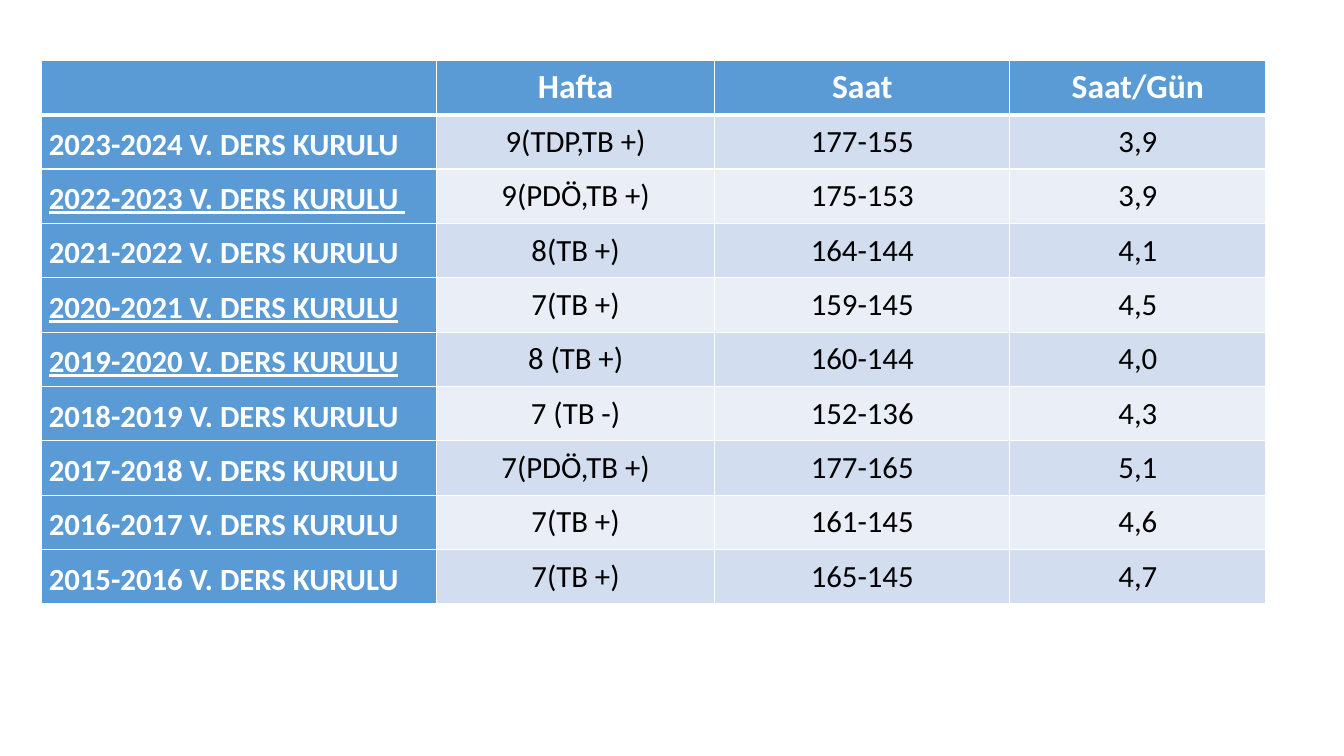
from pptx import Presentation
from pptx.dml.color import RGBColor
from pptx.enum.text import MSO_ANCHOR as Anchor, PP_ALIGN as Align
from pptx.oxml import parse_xml
from pptx.oxml.ns import nsdecls
from pptx.util import Cm, Pt

WHITE = RGBColor(0xFF, 0xFF, 0xFF)
BLACK = RGBColor(0, 0, 0)
BLUE = RGBColor(0x5B, 0x9B, 0xD5)
BANDS = [RGBColor(0xD2, 0xDE, 0xEF), RGBColor(0xEA, 0xEF, 0xF7)]

HEADINGS = ["", "Hafta", "Saat", "Saat/Gün"]
COMMITTEES = [
    ["2023-2024 V. DERS KURULU", "9(TDP,TB +)", "177-155", "3,9"],
    ["2022-2023 V. DERS KURULU ", "9(PDÖ,TB +)", "175-153", "3,9"],
    ["2021-2022 V. DERS KURULU", "8(TB +)", "164-144", "4,1"],
    ["2020-2021 V. DERS KURULU", "7(TB +)", "159-145", "4,5"],
    ["2019-2020 V. DERS KURULU", "8 (TB +)", "160-144", "4,0"],
    ["2018-2019 V. DERS KURULU", "7 (TB -)", "152-136", "4,3"],
    ["2017-2018 V. DERS KURULU", "7(PDÖ,TB +)", "177-165", "5,1"],
    ["2016-2017 V. DERS KURULU", "7(TB +)", "161-145", "4,6"],
    ["2015-2016 V. DERS KURULU", "7(TB +)", "165-145", "4,7"],
]
UNDERLINED_YEARS = {"2022-2023", "2020-2021", "2019-2020"}
COLUMN_WIDTHS = [9.96, 7.01, 7.44, 6.45]
ROW_HEIGHT = 1.37

# Formats of the three kinds of cell
CELL = {"margin_left": Cm(0.19), "margin_right": Cm(0.19),
        "margin_top": 0, "margin_bottom": 0}
HEADING_PARAGRAPH = {"alignment": Align.CENTER, "line_spacing": 1.15}
YEAR_PARAGRAPH = {"alignment": Align.LEFT, "line_spacing": 1.15,
                  "space_after": Pt(10)}
VALUE_PARAGRAPH = {"alignment": Align.CENTER}
HEADING_FONT = {"name": "Calibri", "size": Pt(24), "bold": True}
YEAR_FONT = {"name": "Calibri", "size": Pt(22), "bold": True}
VALUE_FONT = {"name": "Calibri", "size": Pt(22), "bold": False}


def apply_format(target, values):
    for key, value in values.items():
        setattr(target, key, value)


def add_borders(cell, top, bottom):
    widths = {"lnL": 1, "lnR": 1, "lnT": top, "lnB": bottom}
    for position, (side, width) in enumerate(widths.items()):
        cell._tc.get_or_add_tcPr().insert(position, parse_xml(
            f'<a:{side} {nsdecls("a")} w="{Pt(width)}"><a:solidFill>'
            f'<a:srgbClr val="{WHITE}"/></a:solidFill></a:{side}>'))


# Slide
deck = Presentation()
deck.slide_width, deck.slide_height = Cm(33.87), Cm(19.05)
slide = deck.slides.add_slide(deck.slide_layouts[6])

# Table grid
rows = [HEADINGS] + COMMITTEES
hours = slide.shapes.add_table(
    len(rows), len(HEADINGS), Cm(1.04), Cm(1.52),
    Cm(sum(COLUMN_WIDTHS)), Cm(ROW_HEIGHT * len(rows))).table
for column, width in zip(hours.columns, COLUMN_WIDTHS):
    column.width = Cm(width)
for row in hours.rows:
    row.height = Cm(ROW_HEIGHT)

# Cells
for r, texts in enumerate(rows):
    for c, text in enumerate(texts):
        cell = hours.cell(r, c)
        if r == 0:
            paragraph_format, font_format = HEADING_PARAGRAPH, HEADING_FONT
        elif c == 0:
            paragraph_format, font_format = YEAR_PARAGRAPH, YEAR_FONT
        else:
            paragraph_format, font_format = VALUE_PARAGRAPH, VALUE_FONT
        colored = r == 0 or c == 0

        apply_format(cell, CELL)
        cell.vertical_anchor = Anchor.MIDDLE if r else Anchor.TOP
        cell.fill.solid()
        cell.fill.fore_color.rgb = BLUE if colored else BANDS[(r - 1) % 2]
        add_borders(cell, top=3 if r == 1 else 1, bottom=3 if r == 0 else 1)

        if text:
            paragraph = cell.text_frame.paragraphs[0]
            apply_format(paragraph, paragraph_format)
            run = paragraph.add_run()
            run.text = text
            apply_format(run.font, font_format)
            run.font.color.rgb = WHITE if colored else BLACK
            if text[:9] in UNDERLINED_YEARS:
                run.font.underline = True

deck.save("out.pptx")
